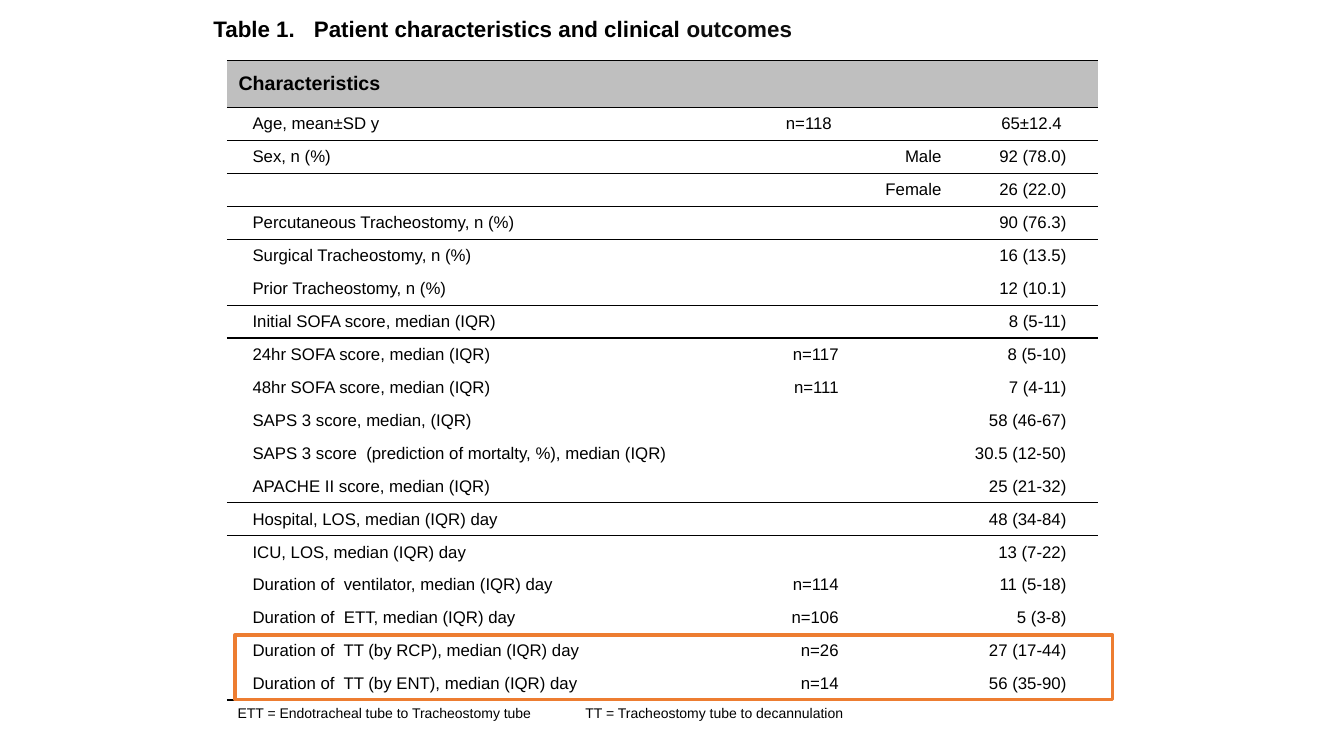
from dataclasses import dataclass
from lxml.etree import SubElement
from pptx import Presentation
from pptx.dml.color import RGBColor
from pptx.enum.shapes import MSO_SHAPE
from pptx.enum.text import MSO_ANCHOR, PP_ALIGN
from pptx.oxml.ns import qn
from pptx.util import Pt

BLACK = "000000"
PLAIN_TABLE_STYLE = "{2D5ABB26-0587-4C30-8999-92F81FD0307C}"
COLUMN_WIDTHS = (136.1, 254.9, 51.1, 73.4, 89.3, 13)
HEADER_HEIGHT = 33.6
ROW_HEIGHT = 23.53
CELL_INSET = 5
LABEL_INSET = 18.4


@dataclass
class Characteristic:
    label: str
    value: str
    count: str = ""
    group: str = ""
    rule: float = 0
    merges: tuple = ((0, 1),)
    count_align: PP_ALIGN = PP_ALIGN.RIGHT
    value_inset: float = CELL_INSET


@dataclass
class Caption:
    left: float
    top: float
    height: float
    tab: float
    size: float
    bold: bool
    wording: tuple


CHARACTERISTICS = (
    Characteristic("Age, mean±SD y", "65±12.4", "n=118", rule=1, merges=((2, 3),),
                   count_align=PP_ALIGN.LEFT, value_inset=8.3),
    Characteristic("Sex, n (%)", "92 (78.0)", group="Male", merges=()),
    Characteristic("", "26 (22.0)", group="Female", rule=1, merges=()),
    Characteristic("Percutaneous Tracheostomy, n (%)", "90 (76.3)"),
    Characteristic("Surgical Tracheostomy, n (%)", "16 (13.5)"),
    Characteristic("Prior Tracheostomy, n (%)", "12 (10.1)", rule=1, merges=((0, 1), (2, 3))),
    Characteristic("Initial SOFA score, median (IQR)", "8 (5-11)"),
    Characteristic("24hr SOFA score, median (IQR)", "8 (5-10)", "n=117"),
    Characteristic("48hr SOFA score, median (IQR)", "7 (4-11)", "n=111"),
    Characteristic("SAPS 3 score, median, (IQR)", "58 (46-67)"),
    Characteristic("SAPS 3 score  (prediction of mortalty, %), median (IQR)", "30.5 (12-50)"),
    Characteristic("APACHE II score, median (IQR)", "25 (21-32)", rule=1),
    Characteristic("Hospital, LOS, median (IQR) day", "48 (34-84)"),
    Characteristic("ICU, LOS, median (IQR) day", "13 (7-22)"),
    Characteristic("Duration of  ventilator, median (IQR) day", "11 (5-18)", "n=114"),
    Characteristic("Duration of  ETT, median (IQR) day", "5 (3-8)", "n=106"),
    Characteristic("Duration of  TT (by RCP), median (IQR) day", "27 (17-44)", "n=26"),
    Characteristic("Duration of  TT (by ENT), median (IQR) day", "56 (35-90)", "n=14", rule=1.5),
)

CAPTIONS = (
    Caption(162.7, 499.7, 19.4, 248.4, 10, False,
            (("ETT = Endotracheal tube to Tracheostomy tube\t"
              "TT = Tracheostomy tube to decannulation", BLACK),)),
    Caption(145.4, 7.2, 39.6, 71.8, 16, True,
            (("Table 1.\tPatient characteristics and clinical ", BLACK), ("outcomes", "0D0D0D"))),
)


def color(value: str) -> RGBColor:
    return RGBColor.from_string(value)


def add_span(para, text: str, size: float, bold: bool = False, tint: str = BLACK) -> None:
    span = para.add_run()
    span.text = text
    formats = {"name": "Arial", "size": Pt(size), "bold": bold}
    for name, value in formats.items():
        setattr(span.font, name, value)
    span.font.color.rgb = color(tint)


def draw_border(cell, edge: str, width: float) -> None:
    properties = cell._tc.get_or_add_tcPr()
    border = SubElement(properties, qn(f"a:{edge}"), w=str(Pt(width)))
    fill = SubElement(border, qn("a:solidFill"))
    SubElement(fill, qn("a:srgbClr"), val=BLACK)


def fill_cell(cell, text: str, align: PP_ALIGN, left: float = CELL_INSET,
              right: float = CELL_INSET, size: float = 12, bold: bool = False) -> None:
    formats = {"margin_left": Pt(left), "margin_right": Pt(right)}
    for name, value in formats.items():
        setattr(cell, name, value)
    para = cell.text_frame.paragraphs[0]
    para.alignment = align
    if text:
        add_span(para, text, size, bold)


def draw_table(page) -> None:
    heights = [HEADER_HEIGHT] + [ROW_HEIGHT] * len(CHARACTERISTICS)
    frame = page.shapes.add_table(len(heights), len(COLUMN_WIDTHS), Pt(162), Pt(43.2),
                                  Pt(sum(COLUMN_WIDTHS)), Pt(sum(heights)))
    frame.element.find(f".//{qn('a:tableStyleId')}").text = PLAIN_TABLE_STYLE
    table = frame.table
    table.first_row = table.horz_banding = False
    for column, width in zip(table.columns, COLUMN_WIDTHS):
        column.width = Pt(width)

    rules = [1.5] + [entry.rule for entry in CHARACTERISTICS]
    rules_above = [1.5] + rules
    for index, (row, height) in enumerate(zip(table.rows, heights)):
        row.height = Pt(height)
        for cell in row.cells:
            formats = {"margin_top": 0, "margin_bottom": 0, "vertical_anchor": MSO_ANCHOR.MIDDLE}
            for name, value in formats.items():
                setattr(cell, name, value)
            for edge, width in (("lnT", rules_above[index]), ("lnB", rules[index])):
                if width:
                    draw_border(cell, edge, width)
            if index == 0:
                cell.fill.solid()
                cell.fill.fore_color.rgb = color("BFBFBF")
            else:
                cell.fill.background()

    table.cell(0, 0).merge(table.cell(0, 4))
    fill_cell(table.cell(0, 0), "Characteristics", PP_ALIGN.LEFT, left=8.4, size=14, bold=True)
    for index, entry in enumerate(CHARACTERISTICS, 1):
        for first, last in entry.merges:
            table.cell(index, first).merge(table.cell(index, last))
        count_inset = 8.4 if entry.count_align == PP_ALIGN.LEFT else CELL_INSET
        fill_cell(table.cell(index, 0), entry.label, PP_ALIGN.JUSTIFY, left=LABEL_INSET)
        fill_cell(table.cell(index, 2), entry.count, entry.count_align, left=count_inset)
        fill_cell(table.cell(index, 3), entry.group, PP_ALIGN.RIGHT)
        fill_cell(table.cell(index, 4), entry.value, PP_ALIGN.RIGHT, right=entry.value_inset)


def draw_caption(page, caption: Caption) -> None:
    box = page.shapes.add_textbox(Pt(caption.left), Pt(caption.top), Pt(702.7), Pt(caption.height))
    box.text_frame.word_wrap = True
    para = box.text_frame.paragraphs[0]
    stops = SubElement(para._p.get_or_add_pPr(), qn("a:tabLst"))
    SubElement(stops, qn("a:tab"), pos=str(Pt(caption.tab)), algn="l")
    for text, tint in caption.wording:
        add_span(para, text, caption.size, caption.bold, tint)


def draw_highlight(page) -> None:
    box = page.shapes.add_shape(MSO_SHAPE.RECTANGLE, Pt(167.8), Pt(453.6), Pt(627.1), Pt(46.1))
    box.shadow.inherit = False
    box.fill.background()
    box.line.color.rgb = color("ED7D31")
    box.line.width = Pt(2.25)


def main() -> None:
    deck = Presentation()
    deck.slide_width, deck.slide_height = Pt(960), Pt(540)
    page = deck.slides.add_slide(deck.slide_layouts[6])
    draw_table(page)
    for caption in CAPTIONS:
        draw_caption(page, caption)
    draw_highlight(page)
    deck.save("out.pptx")


if __name__ == "__main__":
    main()
